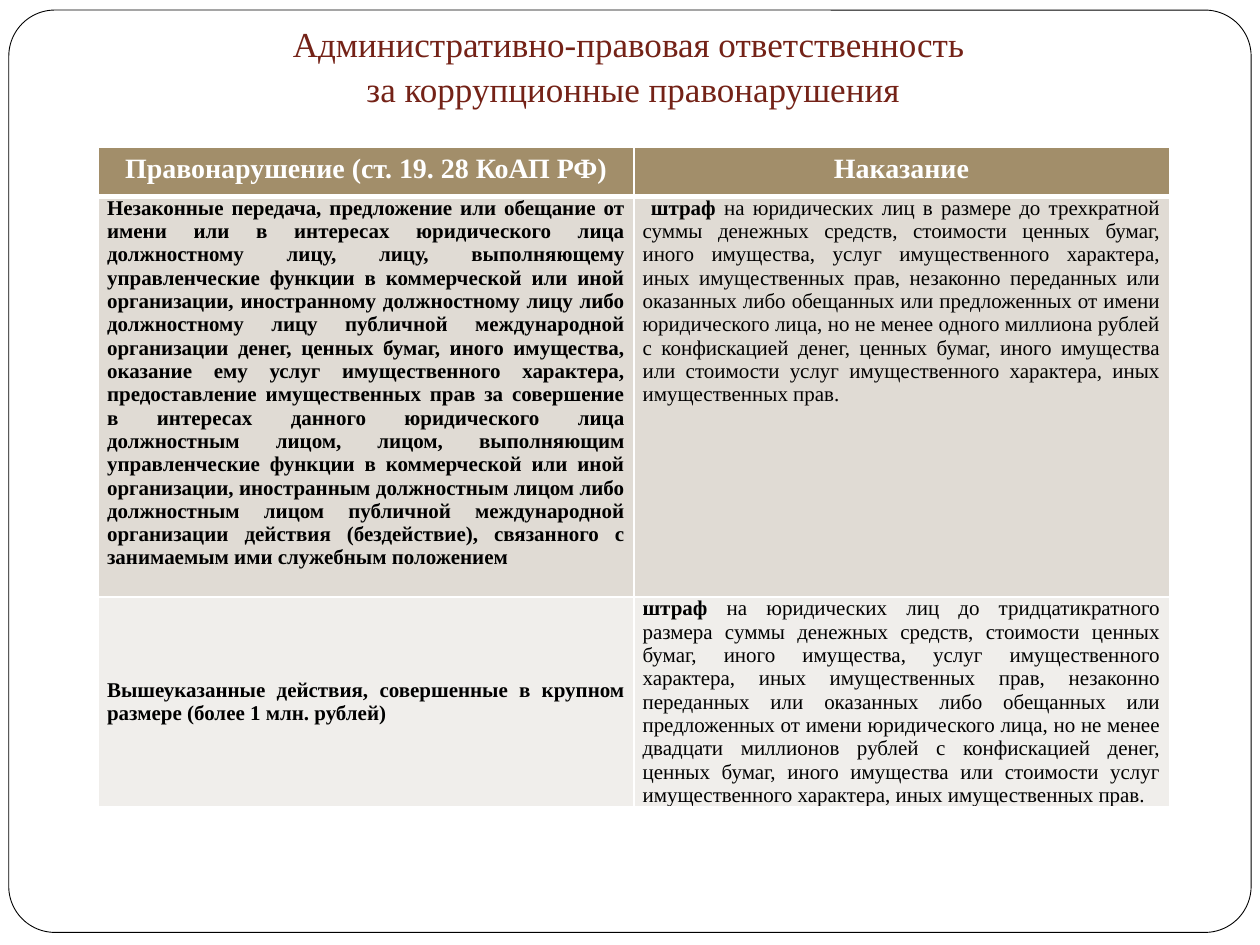
from dataclasses import dataclass

from lxml.etree import SubElement
from pptx import Presentation
from pptx.dml.color import RGBColor
from pptx.enum.shapes import MSO_SHAPE as Preset
from pptx.enum.text import MSO_ANCHOR as Anchor, MSO_AUTO_SIZE as AutoSize, PP_ALIGN as Align
from pptx.oxml.ns import qn
from pptx.util import Inches, Pt


@dataclass(frozen=True)
class Theme:
    """Colours, font and type sizes of the slide."""
    font: str = "Times New Roman"
    white: str = "FFFFFF"
    black: str = "000000"
    title: str = "742217"
    header: str = "A28E6A"
    bands: tuple = ("E0DBD4", "F0EEEB")
    title_size: int = 20
    header_size: int = 16
    body_size: int = 12


THEME = Theme()
TITLE = "Административно-правовая ответственность \vза коррупционные правонарушения"
HEADERS = ("Правонарушение (ст. 19. 28 КоАП РФ)", "Наказание")
ROW_HEIGHTS = (0.39, 3.18, 1.66)
OFFENCES = (
    "Незаконные передача, предложение или обещание от имени или в интересах юридического лица "
    "должностному лицу, лицу, выполняющему управленческие функции в коммерческой или иной "
    "организации, иностранному должностному лицу либо должностному лицу публичной международной "
    "организации денег, ценных бумаг, иного имущества, оказание ему услуг имущественного "
    "характера, предоставление имущественных прав за совершение в интересах данного юридического "
    "лица должностным лицом, лицом, выполняющим управленческие функции в коммерческой или иной "
    "организации, иностранным должностным лицом либо должностным лицом публичной международной "
    "организации действия (бездействие), связанного с занимаемым ими служебным положением",
    "Вышеуказанные действия, совершенные в крупном размере (более 1 млн. рублей)",
)
PENALTIES = (
    ((" ", False), ("штраф ", True), (
        "на юридических лиц в размере до трехкратной суммы денежных средств, стоимости ценных "
        "бумаг, иного имущества, услуг имущественного характера, иных имущественных прав, "
        "незаконно переданных или оказанных либо обещанных или предложенных от имени "
        "юридического лица, но не менее одного миллиона рублей с конфискацией денег, ценных "
        "бумаг, иного имущества или стоимости услуг имущественного характера, иных "
        "имущественных прав.", False)),
    (("штраф", True), (
        " на юридических лиц до тридцатикратного размера суммы денежных средств, стоимости "
        "ценных бумаг, иного имущества, услуг имущественного характера, иных имущественных "
        "прав, незаконно переданных или оказанных либо обещанных или предложенных от имени "
        "юридического лица, но не менее двадцати миллионов рублей с конфискацией денег, ценных "
        "бумаг, иного имущества или стоимости услуг имущественного характера, иных "
        "имущественных прав.", False)),
)


def colour(value):
    """Turn a hex string into a colour."""
    return RGBColor.from_string(value)


def style_paragraph(paragraph, size, value, align):
    """Set the font and alignment of a paragraph."""
    paragraph.alignment = align
    paragraph.font.name = THEME.font
    paragraph.font.size = Pt(size)
    paragraph.font.color.rgb = colour(value)


def set_margins(target, left, top, right, bottom):
    """Set the inner margins of a cell or text frame."""
    target.margin_left, target.margin_top = Inches(left), Inches(top)
    target.margin_right, target.margin_bottom = Inches(right), Inches(bottom)


def add_frame(slide, left, top, width, height):
    """Place the rounded page frame behind the title."""
    frame = slide.shapes.add_shape(
        Preset.ROUNDED_RECTANGLE, Inches(left), Inches(top), Inches(width), Inches(height))
    frame.adjustments[0] = 0.05
    frame.shadow.inherit = False
    frame.fill.solid()
    frame.fill.fore_color.rgb = colour(THEME.white)
    frame.line.color.rgb = colour(THEME.black)
    frame.line.width = Pt(0.5)
    slide.shapes.title._element.addprevious(frame._element)


def place_title(slide, left, top, width, height):
    """Move and format the title placeholder."""
    title = slide.shapes.title
    title.left, title.top = Inches(left), Inches(top)
    title.width, title.height = Inches(width), Inches(height)
    text_frame = title.text_frame
    text_frame.text = TITLE
    text_frame.word_wrap = True
    text_frame.auto_size = AutoSize.NONE
    text_frame.vertical_anchor = Anchor.BOTTOM
    set_margins(text_frame, 0.1, 0.05, 0.1, 0.1)
    paragraph = text_frame.paragraphs[0]
    style_paragraph(paragraph, THEME.title_size, THEME.title, Align.CENTER)
    paragraph.line_spacing = 1.08


def set_borders(cell, widths):
    """Draw white cell borders with the given widths in points."""
    properties = cell._tc.get_or_add_tcPr()
    for side, width in widths.items():
        line = SubElement(properties, qn(f"a:ln{side}"), w=str(Pt(width)))
        fill = SubElement(line, qn("a:solidFill"))
        SubElement(fill, qn("a:srgbClr"), val=THEME.white)


def fill_cell(cell, runs, row, anchor):
    """Write and format one table cell."""
    header = row == 0
    set_borders(cell, {"L": 1, "R": 1, "T": 3 if row == 1 else 1, "B": 3 if header else 1})
    cell.fill.solid()
    cell.fill.fore_color.rgb = colour(THEME.header if header else THEME.bands[row - 1])
    cell.vertical_anchor = anchor
    paragraph = cell.text_frame.paragraphs[0]
    for text, bold in runs:
        run = paragraph.add_run()
        run.text = text
        run.font.bold = bold
    if header:
        set_margins(cell, 0.09, 0.05, 0.09, 0.05)
        style_paragraph(paragraph, THEME.header_size, THEME.white, Align.CENTER)
    else:
        set_margins(cell, 0.07, 0, 0.07, 0)
        style_paragraph(paragraph, THEME.body_size, THEME.black, Align.JUSTIFY)


def add_penalty_table(slide, left, top, width):
    """Add the table of offences and penalties."""
    rows = [[((header, True),) for header in HEADERS]]
    rows += [[((offence, True),), penalty] for offence, penalty in zip(OFFENCES, PENALTIES)]
    table = slide.shapes.add_table(
        len(rows), len(HEADERS), Inches(left), Inches(top),
        Inches(width), Inches(sum(ROW_HEIGHTS))).table
    for row, (height, contents) in enumerate(zip(ROW_HEIGHTS, rows)):
        table.rows[row].height = Inches(height)
        for column, runs in enumerate(contents):
            anchor = Anchor.MIDDLE if (row, column) == (2, 0) else Anchor.TOP
            fill_cell(table.cell(row, column), runs, row, anchor)


def main():
    """Build and save the presentation."""
    presentation = Presentation()
    presentation.slide_width, presentation.slide_height = Inches(10), Inches(7.5)
    slide = presentation.slides.add_slide(presentation.slide_layouts.get_by_name("Title Only"))
    add_frame(slide, 0.07, 0.08, 9.86, 7.32)
    place_title(slide, 0.55, 0.39, 8.95, 0.58)
    add_penalty_table(slide, 0.78, 1.17, 8.5)
    presentation.save("out.pptx")


if __name__ == "__main__":
    main()
